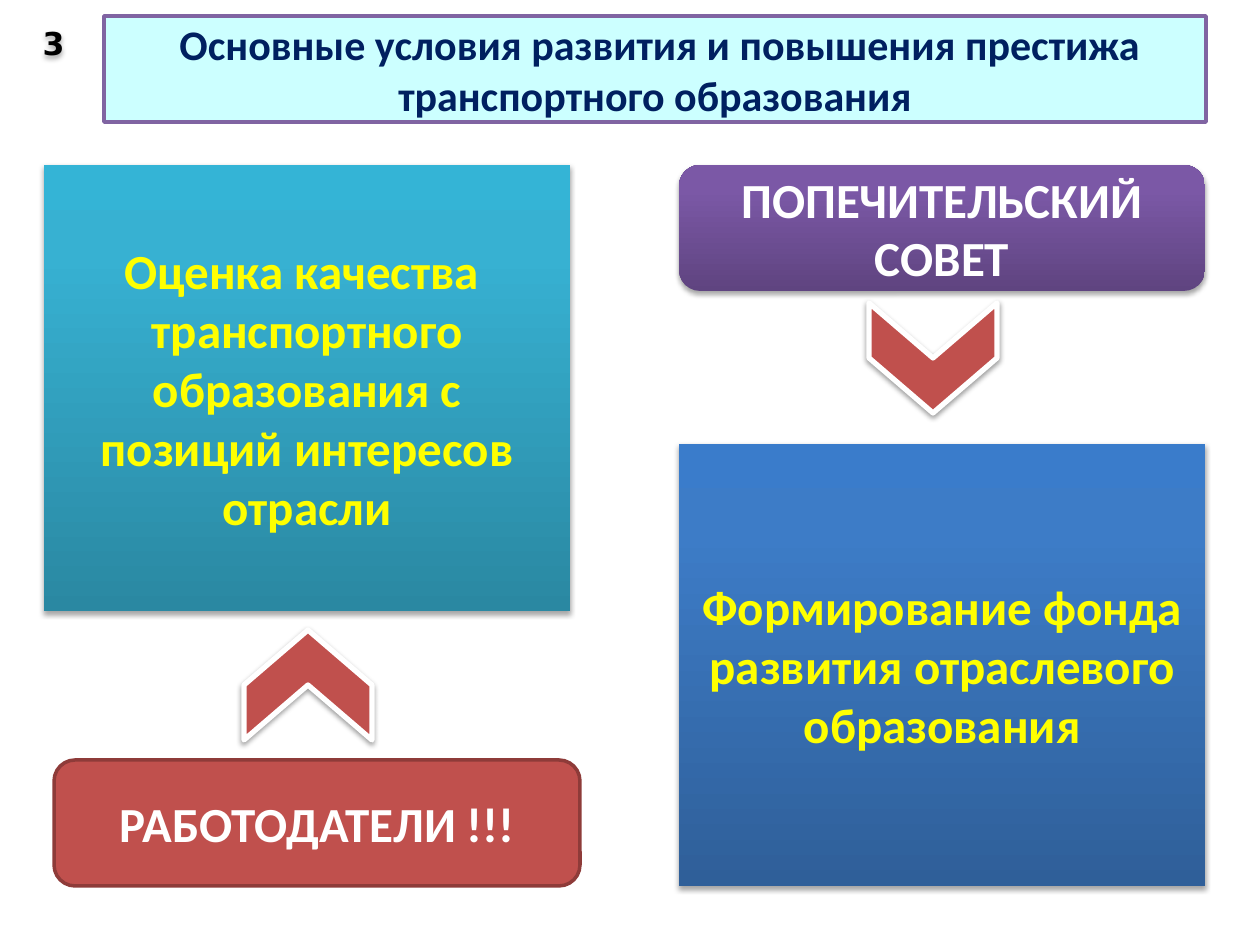
from dataclasses import dataclass
from typing import Optional

from lxml import etree
from pptx import Presentation
from pptx import util as u
from pptx.dml import color
from pptx.enum import shapes, text
from pptx.oxml import ns

PX = 914400 / 126
KIND = shapes.MSO_SHAPE
YELLOW, WHITE, BRICK = "FFFF00", "FFFFFF", "C0504D"


@dataclass
class Shadow:
    alpha: int
    distance: float
    blur: float = 3.1


@dataclass
class Block:
    kind: Optional[int]
    box: tuple[int, int, int, int]
    fill: tuple[str, ...] = ()
    line: Optional[tuple[str, int]] = None
    shadow: Optional[Shadow] = None
    lines: tuple[str, ...] = ()
    ink: str = WHITE
    size: int = 28
    font: str = "Calibri"
    inset: tuple[int, int] = (13, 6)
    turn: int = 0


SOFT = Shadow(35, 1.8)
CHEVRON_SHADOW = Shadow(38, 1.6)

BLOCKS = [
    Block(KIND.RECTANGLE, (104, 16, 1102, 106), ("CCFFFF",), ("8064A2", 2),
          lines=(" Основные условия развития и повышения престижа",
                 "транспортного образования"),
          ink="002060", size=24, inset=(8, 4)),
    Block(KIND.RECTANGLE, (679, 444, 526, 442), ("2F5F99", "3D7CC7", "3A7CCB"),
          shadow=SOFT, ink=YELLOW,
          lines=("Формирование фонда развития отраслевого образования",)),
    Block(None, (24, 19, 59, 47), shadow=SOFT, lines=("3",), ink="000000",
          size=18, font="DejaVu Sans"),
    Block(KIND.RECTANGLE, (44, 165, 526, 446), ("2A88A2", "37B1D2", "34B4D6"),
          shadow=SOFT, ink=YELLOW,
          lines=("Оценка качества ",
                 "транспортного образования с позиций интересов отрасли")),
    Block(KIND.ROUNDED_RECTANGLE, (54, 760, 526, 126), (BRICK,), ("8E3B39", 2),
          lines=("РАБОТОДАТЕЛИ !!!",)),
    Block(KIND.CHEVRON, (253, 621, 110, 128), (BRICK,), (WHITE, 3),
          CHEVRON_SHADOW, turn=270),
    Block(KIND.ROUNDED_RECTANGLE, (679, 165, 526, 126),
          ("5F4480", "7B58A6", "7C57A8"), shadow=SOFT,
          lines=("ПОПЕЧИТЕЛЬСКИЙ СОВЕТ",)),
    Block(KIND.CHEVRON, (878, 294, 110, 128), (BRICK,), (WHITE, 3),
          CHEVRON_SHADOW, turn=90),
]


def px(length: int) -> int:
    return round(length * PX)


def rgb(value: str) -> color.RGBColor:
    return color.RGBColor.from_string(value)


def assign(target, values: dict) -> None:
    for name, value in values.items():
        setattr(target, name, value)


def add_node(parent, tag: str, **attributes):
    return etree.SubElement(parent, ns.qn(tag),
                            {key: str(value) for key, value in attributes.items()})


def paint(shape, colours: tuple[str, ...]) -> None:
    if not colours:
        shape.fill.background()
    elif len(colours) == 1:
        shape.fill.solid()
        shape.fill.fore_color.rgb = rgb(colours[0])
    else:
        shape.fill.gradient()
        shape.fill.gradient_angle = 90
        stops = shape._element.spPr.find(".//" + ns.qn("a:gsLst"))
        for stop in list(stops):
            stops.remove(stop)
        for position, colour in zip((0, 80, 100), colours):
            stop = add_node(stops, "a:gs", pos=position * 1000)
            add_node(stop, "a:srgbClr", val=colour)


def outline(shape, line: Optional[tuple[str, int]]) -> None:
    if line is None:
        shape.line.fill.background()
        return
    colour, width = line
    shape.line.color.rgb = rgb(colour)
    shape.line.width = u.Pt(width)


def cast_shadow(shape, shadow: Optional[Shadow]) -> None:
    shape.shadow.inherit = False
    if shadow is None:
        return
    effects = shape._element.spPr.find(ns.qn("a:effectLst"))
    outer = add_node(effects, "a:outerShdw", blurRad=u.Pt(shadow.blur),
                     dist=u.Pt(shadow.distance), dir=90 * 60000, rotWithShape=0)
    tint = add_node(outer, "a:srgbClr", val="000000")
    add_node(tint, "a:alpha", val=shadow.alpha * 1000)


def write(shape, block: Block) -> None:
    frame = shape.text_frame
    across, down = map(px, block.inset)
    assign(frame, dict(word_wrap=True, vertical_anchor=text.MSO_ANCHOR.MIDDLE,
                       margin_left=across, margin_right=across,
                       margin_top=down, margin_bottom=down))
    for index, words in enumerate(block.lines):
        para = frame.add_paragraph() if index else frame.paragraphs[0]
        para.alignment = text.PP_ALIGN.CENTER
        span = para.add_run()
        span.text = words
        assign(span.font, dict(name=block.font, size=u.Pt(block.size), bold=True))
        span.font.color.rgb = rgb(block.ink)


def draw(page, block: Block) -> None:
    box = [px(length) for length in block.box]
    if block.kind is None:
        shape = page.shapes.add_textbox(*box)
    else:
        shape = page.shapes.add_shape(block.kind, *box)
    shape.rotation = block.turn
    paint(shape, block.fill)
    outline(shape, block.line)
    cast_shadow(shape, block.shadow)
    if block.lines:
        write(shape, block)


def main() -> None:
    deck = Presentation()
    assign(deck, dict(slide_width=px(1260), slide_height=px(945)))
    page = deck.slides.add_slide(deck.slide_layouts[6])
    for block in BLOCKS:
        draw(page, block)
    deck.save("out.pptx")


if __name__ == "__main__":
    main()
